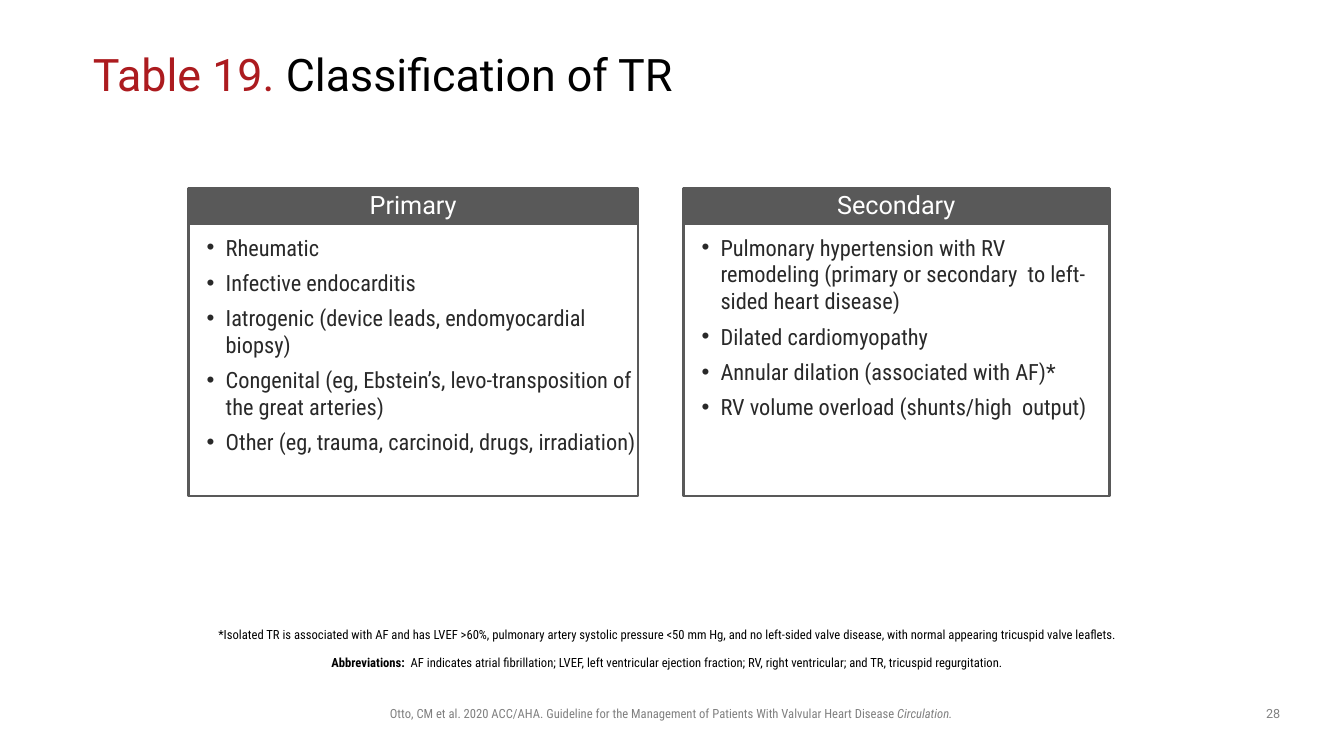
import pptx
import pptx.dml.color
import pptx.enum.shapes
import pptx.enum.text
import pptx.oxml
import pptx.oxml.ns
import pptx.util

Cm = pptx.util.Cm
Pt = pptx.util.Pt
RGBColor = pptx.dml.color.RGBColor
ALIGN = pptx.enum.text.PP_ALIGN
ANCHOR = pptx.enum.text.MSO_ANCHOR

RED = RGBColor(0xAC, 0x1B, 0x1F)
BLACK = RGBColor(0, 0, 0)
WHITE = RGBColor(0xFF, 0xFF, 0xFF)
SLATE = RGBColor(0x59, 0x59, 0x59)
INK = RGBColor(0x29, 0x29, 0x29)
GREY = RGBColor(0x80, 0x80, 0x80)

TITLE = {"name": "Roboto", "size": Pt(32)}
HEADING = {"name": "Roboto", "size": Pt(18)}
ITEM = {"name": "Roboto Condensed", "size": Pt(16)}
SMALL = {"name": "Roboto Condensed", "size": Pt(9)}
PAGE_NUMBER = {"name": "Roboto", "size": Pt(9)}

CARD_TOP = 4.75
CARDS = [
    (4.75, 11.33, 0, "Primary", [
        "Rheumatic",
        "Infective endocarditis",
        "Iatrogenic (device leads, endomyocardial biopsy)",
        "Congenital (eg, Ebstein’s, levo-transposition of the great arteries)",
        "Other (eg, trauma, carcinoid, drugs, irradiation)",
    ]),
    (17.22, 10.74, 0.25, "Secondary", [
        "Pulmonary hypertension with RV remodeling "
        "(primary or secondary  to left-sided heart disease)",
        "Dilated cardiomyopathy",
        "Annular dilation (associated with AF)*",
        "RV volume overload (shunts/high  output)",
    ]),
]


def apply(target, values):
    for name, value in values.items():
        setattr(target, name, value)


def set_frame(frame, insets, anchor=ANCHOR.TOP):
    left, top, right, bottom = insets
    apply(frame, {
        "word_wrap": True, "vertical_anchor": anchor,
        "margin_left": Cm(left), "margin_top": Cm(top),
        "margin_right": Cm(right), "margin_bottom": Cm(bottom),
    })
    return frame


def add_span(para, text, style, color, **extra):
    span = para.add_run()
    span.text = text
    apply(span.font, {**style, **extra})
    span.font.color.rgb = color


def add_text_box(page, box, insets=(0.25, 0.13, 0.25, 0.13), anchor=ANCHOR.TOP):
    text_box = page.shapes.add_textbox(*map(Cm, box))
    return set_frame(text_box.text_frame, insets, anchor)


def add_panel(page, box, fill):
    panel = page.shapes.add_shape(
        pptx.enum.shapes.MSO_SHAPE.RECTANGLE, *map(Cm, box))
    panel.shadow.inherit = False
    panel.fill.solid()
    panel.fill.fore_color.rgb = fill
    panel.line.color.rgb = SLATE
    panel.line.width = Pt(2)
    return panel.text_frame


def add_bullet(para):
    properties = para._p.get_or_add_pPr()
    properties.set("marL", str(Cm(0.94)))
    properties.set("indent", str(-Cm(0.48)))
    namespace = pptx.oxml.ns.nsdecls("a")
    for tag in ('buFont typeface="Arial"', 'buChar char="•"'):
        properties.append(pptx.oxml.parse_xml(f"<a:{tag} {namespace}/>"))


def add_title(page, box):
    frame = add_text_box(page, box, (0, 0, 0, 0), ANCHOR.MIDDLE)
    para = frame.paragraphs[0]
    para.line_spacing = 0.9
    add_span(para, "Table 19. ", TITLE, RED)
    add_span(para, "Classification of TR", TITLE, BLACK)


def add_card(page, box, right_inset, heading, items):
    left, top, width, height = box
    header_height = 0.89

    # Header bar
    frame = add_panel(page, (left, top, width, header_height), SLATE)
    set_frame(frame, (0, 0, 0, 0), ANCHOR.MIDDLE)
    para = frame.paragraphs[0]
    apply(para, {"alignment": ALIGN.CENTER, "line_spacing": 0.9})
    add_span(para, heading, HEADING, WHITE)

    # Bulleted list
    body = (left, top + header_height, width, height - header_height)
    frame = set_frame(add_panel(page, body, WHITE), (0, 0.25, right_inset, 0))
    for index, item in enumerate(items):
        para = frame.add_paragraph() if index else frame.paragraphs[0]
        apply(para, {"alignment": ALIGN.LEFT, "space_after": Pt(6)})
        add_bullet(para)
        add_span(para, item, ITEM, INK)


def add_footnotes(page, box):
    frame = add_text_box(page, box, (0, 0.13, 0.25, 0.13))
    note = frame.paragraphs[0]
    add_span(note, "*Isolated TR is associated with AF and has LVEF >60%, pulmonary "
             "artery systolic pressure <50 mm Hg, and no left-sided valve disease, "
             "with normal appearing tricuspid valve leaflets.", SMALL, BLACK)
    terms = frame.add_paragraph()
    terms.space_before = Pt(10)
    add_span(terms, "Abbreviations:  ", SMALL, BLACK, bold=True)
    add_span(terms, "AF indicates atrial fibrillation; LVEF, left ventricular ejection "
             "fraction; RV, right ventricular; and TR, tricuspid regurgitation.",
             SMALL, BLACK)
    for para in (note, terms):
        apply(para, {"alignment": ALIGN.CENTER, "line_spacing": 0.9})


def add_footer(page, box):
    left, top, width, height = box

    # Citation
    para = add_text_box(page, (left, top, 17.73, height)).paragraphs[0]
    para.alignment = ALIGN.CENTER
    add_span(para, "Otto, CM et al. 2020 ACC/AHA. Guideline for the Management of "
             "Patients With Valvular Heart Disease ", SMALL, GREY)
    add_span(para, "Circulation.", SMALL, GREY, italic=True)

    # Page number
    number_width = 1.07
    number_box = (left + width - number_width, top, number_width, height)
    para = add_text_box(page, number_box).paragraphs[0]
    para.alignment = ALIGN.CENTER
    add_span(para, "28", PAGE_NUMBER, GREY)


def main():
    deck = pptx.Presentation()
    apply(deck, {"slide_width": Cm(33.87), "slide_height": Cm(19.05)})
    page = deck.slides.add_slide(deck.slide_layouts[6])
    add_title(page, (2.34, 1.02, 29.21, 1.83))
    for left, width, right_inset, heading, items in CARDS:
        add_card(page, (left, CARD_TOP, width, 7.75), right_inset, heading, items)
    add_footnotes(page, (4.75, 15.72, 24.36, 0.76))
    add_footer(page, (8.05, 17.65, 24.57, 0.64))
    deck.save("out.pptx")


if __name__ == "__main__":
    main()
